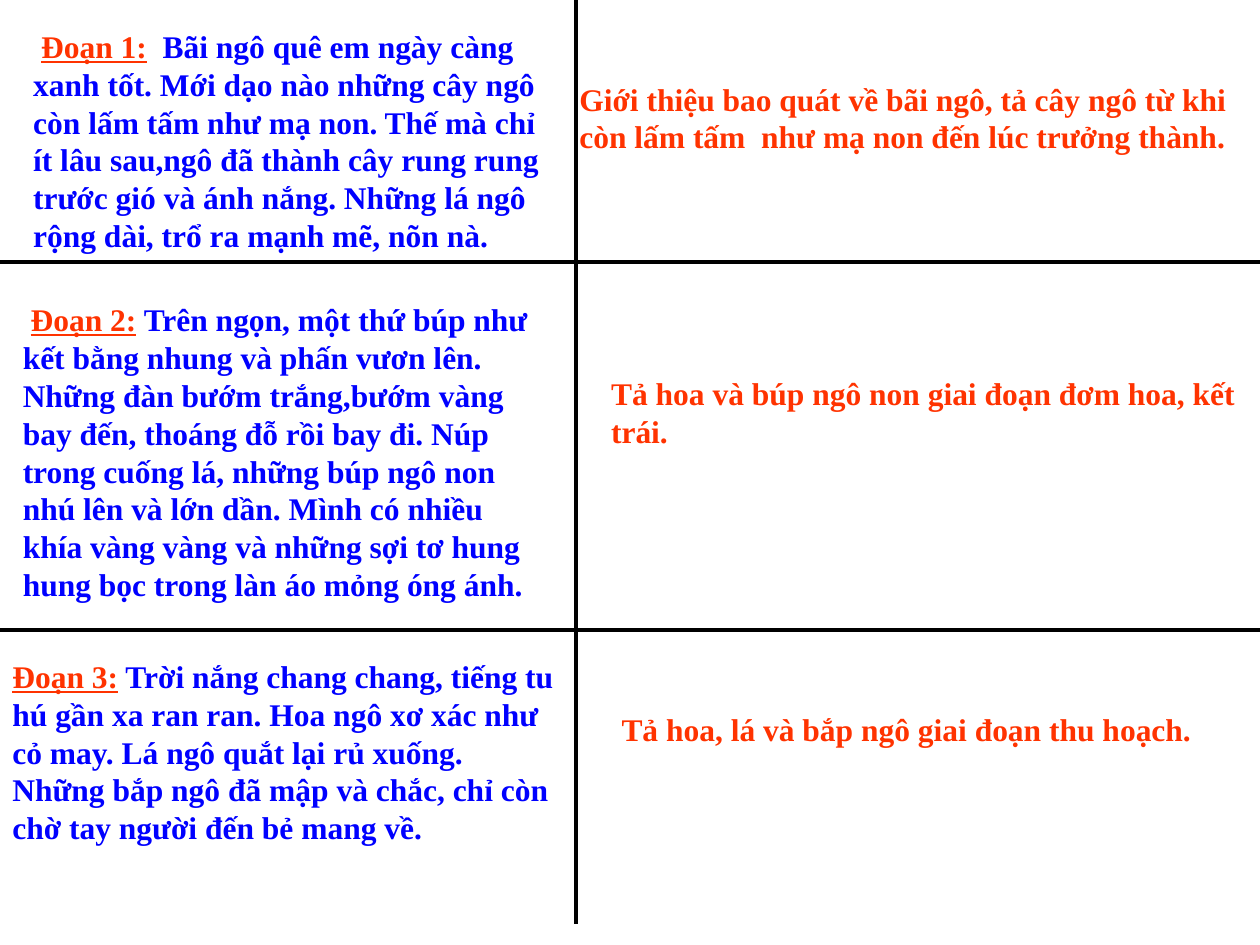
"""Build a slide that pairs three passages about a corn field with their main ideas."""
from dataclasses import dataclass

from lxml import etree
from pptx import Presentation
from pptx.dml.color import RGBColor
from pptx.enum.shapes import MSO_CONNECTOR
from pptx.oxml.ns import qn
from pptx.util import Cm, Pt

STRAIGHT = MSO_CONNECTOR.STRAIGHT


@dataclass(frozen=True)
class Theme:
    font: str = "Times New Roman"
    size: float = 18
    rule_width: float = 2.25
    accent: RGBColor = RGBColor(0xFF, 0x33, 0x00)
    body: RGBColor = RGBColor(0x00, 0x00, 0xFF)
    rule: RGBColor = RGBColor(0x00, 0x00, 0x00)
    space_before: str = "50000"


THEME = Theme()


def add_run(paragraph, text, color=THEME.accent, underline=False):
    run = paragraph.add_run()
    run.text = text
    run.font.name = THEME.font
    run.font.size = Pt(THEME.size)
    run.font.bold = True
    run.font.underline = underline
    run.font.color.rgb = color


def add_paragraph_box(left, top, width, height):
    box = slide.shapes.add_textbox(Cm(left), Cm(top), Cm(width), Cm(height))
    box.text_frame.word_wrap = True
    paragraph = box.text_frame.paragraphs[0]
    spacing = etree.SubElement(paragraph._p.get_or_add_pPr(), qn("a:spcBef"))
    etree.SubElement(spacing, qn("a:spcPct")).set("val", THEME.space_before)
    return paragraph


presentation = Presentation()
presentation.slide_width = Cm(25.4)
presentation.slide_height = Cm(19.05)
slide = presentation.slides.add_slide(presentation.slide_layouts[6])

passages = [
    ((0.42, 0.42, 10.8, 4.83), " ", "Đoạn 1:",
     "  Bãi ngô quê em ngày càng xanh tốt. Mới dạo nào những cây ngô còn lấm tấm "
     "như mạ non. Thế mà chỉ ít lâu sau,ngô đã thành cây rung rung trước gió và "
     "ánh nắng. Những lá ngô rộng dài, trổ ra mạnh mẽ, nõn nà."),
    ((0.21, 5.93, 11, 6.35), " ", "Đoạn 2:",
     " Trên ngọn, một thứ búp như kết bằng nhung và phấn vươn lên. Những đàn bướm "
     "trắng,bướm vàng bay đến, thoáng đỗ rồi bay đi. Núp trong cuống lá, những búp "
     "ngô non nhú lên và lớn dần. Mình có nhiều khía vàng vàng và những sợi tơ hung "
     "hung bọc trong làn áo mỏng óng ánh."),
    ((0, 13.12, 11.43, 4.06), "", "Đoạn 3:",
     " Trời nắng chang chang, tiếng tu hú gần xa ran ran. Hoa ngô xơ xác như cỏ may. "
     "Lá ngô quắt lại rủ xuống. Những bắp ngô đã mập và chắc, chỉ còn chờ tay người "
     "đến bẻ mang về."),
]
for place, lead, heading, story in passages:
    passage = add_paragraph_box(*place)
    if lead:
        add_run(passage, lead)
    add_run(passage, heading, underline=True)
    add_run(passage, story, color=THEME.body)

main_ideas = [
    ((11.43, 1.48, 13.97, 1.78),
     "Giới thiệu bao quát về bãi ngô, tả cây ngô từ khi còn lấm tấm  như mạ non "
     "đến lúc trưởng thành."),
    ((12.07, 7.41, 13.33, 1.78), "Tả hoa và búp ngô non giai đoạn đơm hoa, kết trái."),
    ((12.28, 14.18, 12.7, 1.02), "Tả hoa, lá và bắp ngô giai đoạn thu hoạch."),
]
for place, idea in main_ideas:
    add_run(add_paragraph_box(*place), idea)

dividers = [
    (11.61, 0, 11.61, 18.63),
    (0, 5.29, 25.4, 5.29),
    (0, 12.7, 25.4, 12.7),
]
for ends in dividers:
    divider = slide.shapes.add_connector(STRAIGHT, *map(Cm, ends))
    divider.line.color.rgb = THEME.rule
    divider.line.width = Pt(THEME.rule_width)
    etree.SubElement(divider._element.spPr, qn("a:effectLst"))

presentation.save("out.pptx")
